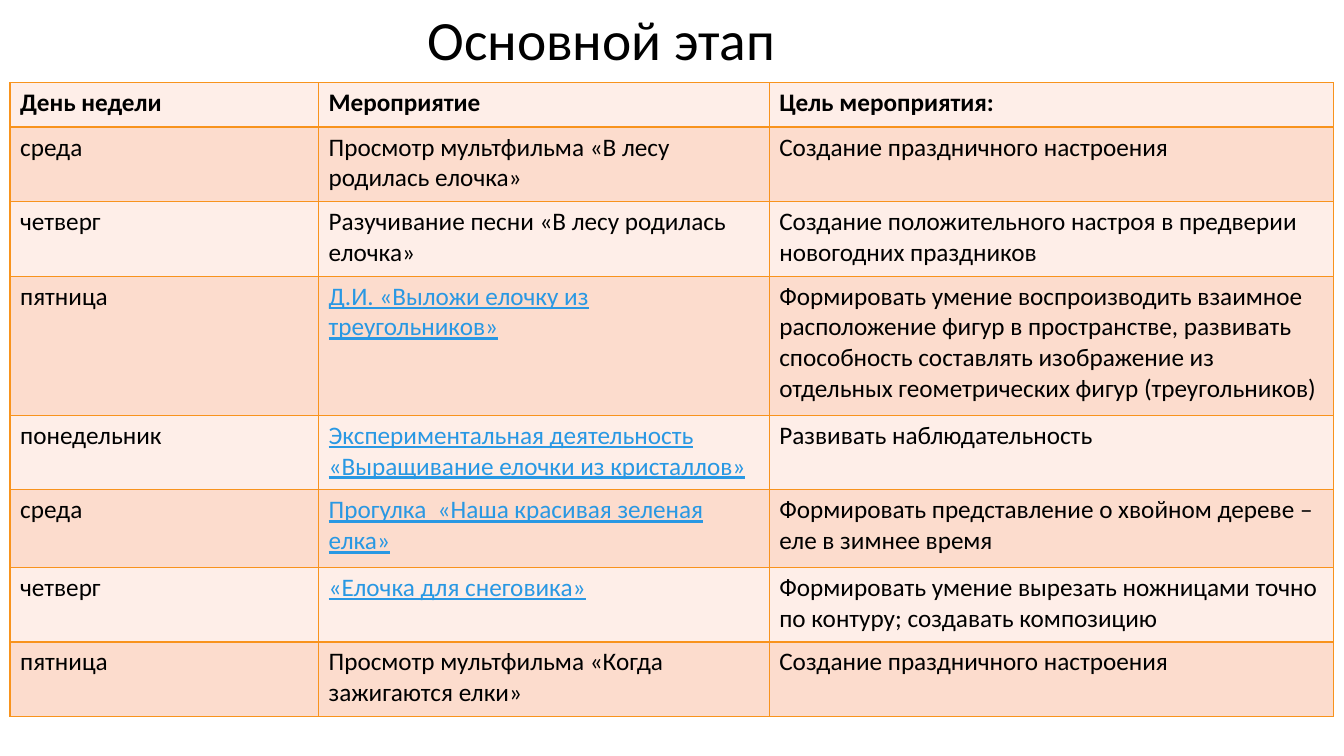
from lxml import etree
from pptx import Presentation
from pptx.dml.color import RGBColor
from pptx.enum.text import MSO_ANCHOR
from pptx.oxml.ns import qn
from pptx.util import Inches, Pt

MIDDLE = MSO_ANCHOR.MIDDLE
FONT = "Calibri"
COLORS = {
    "text": "000000",
    "activity_link": "2998E3",
    "light_row": "FEEEE8",
    "dark_row": "FCDCCD",
    "border": "F8931D",
}
COLUMN_WIDTHS = [3.06, 4.47, 5.6]
ROW_HEIGHTS = [0.44, 0.74, 0.74, 1.38, 0.74, 0.77, 0.74, 0.74]
LINKED_ROWS = range(3, 7)
ACTIVITY_COLUMN = 1
SCHEDULE = [
    ("День недели", "Мероприятие", "Цель мероприятия:"),
    ("среда", "Просмотр мультфильма «В лесу родилась елочка»",
     "Создание праздничного настроения"),
    ("четверг", "Разучивание песни «В лесу родилась елочка»",
     "Создание положительного настроя в предверии новогодних праздников"),
    ("пятница", "Д.И. «Выложи елочку из треугольников»",
     "Формировать умение воспроизводить взаимное расположение фигур в "
     "пространстве, развивать способность составлять изображение из "
     "отдельных геометрических фигур (треугольников)"),
    ("понедельник",
     "Экспериментальная деятельность «Выращивание елочки из кристаллов»",
     "Развивать наблюдательность"),
    ("среда", "Прогулка  «Наша красивая зеленая елка»",
     "Формировать представление о хвойном дереве – еле в зимнее время"),
    ("четверг", "«Елочка для снеговика»",
     "Формировать умение вырезать ножницами точно по контуру; "
     "создавать композицию"),
    ("пятница", "Просмотр мультфильма «Когда зажигаются елки»",
     "Создание праздничного настроения"),
]


def rgb(name):
    return RGBColor.from_string(COLORS[name])


def set_font(paragraph, size, color="text", bold=False, underline=False):
    font = paragraph.font
    font.name = FONT
    font.size = Pt(size)
    font.bold = bold
    font.underline = underline
    font.color.rgb = rgb(color)


def add_title(slide, text):
    title = slide.shapes.add_textbox(
        Inches(0.92), Inches(0.14), Inches(11.5), Inches(0.57))
    frame = title.text_frame
    frame.word_wrap = True
    frame.vertical_anchor = MIDDLE
    frame.margin_left = Inches(3.32)
    heading = frame.paragraphs[0]
    heading.text = text
    heading.line_spacing = 0.9
    set_font(heading, 39.6)


def set_borders(cell):
    """Outline all four sides; borders must precede the fill in the XML."""
    properties = cell._tc.get_or_add_tcPr()
    for position, side in enumerate(("a:lnL", "a:lnR", "a:lnT", "a:lnB")):
        line = etree.Element(qn(side), w=str(Pt(1)))
        fill = etree.SubElement(line, qn("a:solidFill"))
        etree.SubElement(fill, qn("a:srgbClr"), val=COLORS["border"])
        properties.insert(position, line)


def fill_cell(cell, text, background, **font):
    cell.fill.solid()
    cell.fill.fore_color.rgb = rgb(background)
    set_borders(cell)
    paragraph = cell.text_frame.paragraphs[0]
    paragraph.text = text
    set_font(paragraph, 18, **font)


def add_schedule(slide):
    schedule = slide.shapes.add_table(
        len(ROW_HEIGHTS), len(COLUMN_WIDTHS), Inches(0.1), Inches(0.82),
        Inches(sum(COLUMN_WIDTHS)), Inches(sum(ROW_HEIGHTS))).table
    for column, width in zip(schedule.columns, COLUMN_WIDTHS):
        column.width = Inches(width)
    for row, height in zip(schedule.rows, ROW_HEIGHTS):
        row.height = Inches(height)
    for r, entries in enumerate(SCHEDULE):
        background = "dark_row" if r % 2 else "light_row"
        for c, text in enumerate(entries):
            linked = r in LINKED_ROWS and c == ACTIVITY_COLUMN
            fill_cell(schedule.cell(r, c), text, background,
                      color="activity_link" if linked else "text",
                      bold=r == 0, underline=linked)


def main():
    presentation = Presentation()
    presentation.slide_width = Inches(13.33)
    presentation.slide_height = Inches(7.5)
    slide = presentation.slides.add_slide(presentation.slide_layouts[6])
    add_title(slide, "Основной этап")
    add_schedule(slide)
    presentation.save("out.pptx")


if __name__ == "__main__":
    main()
